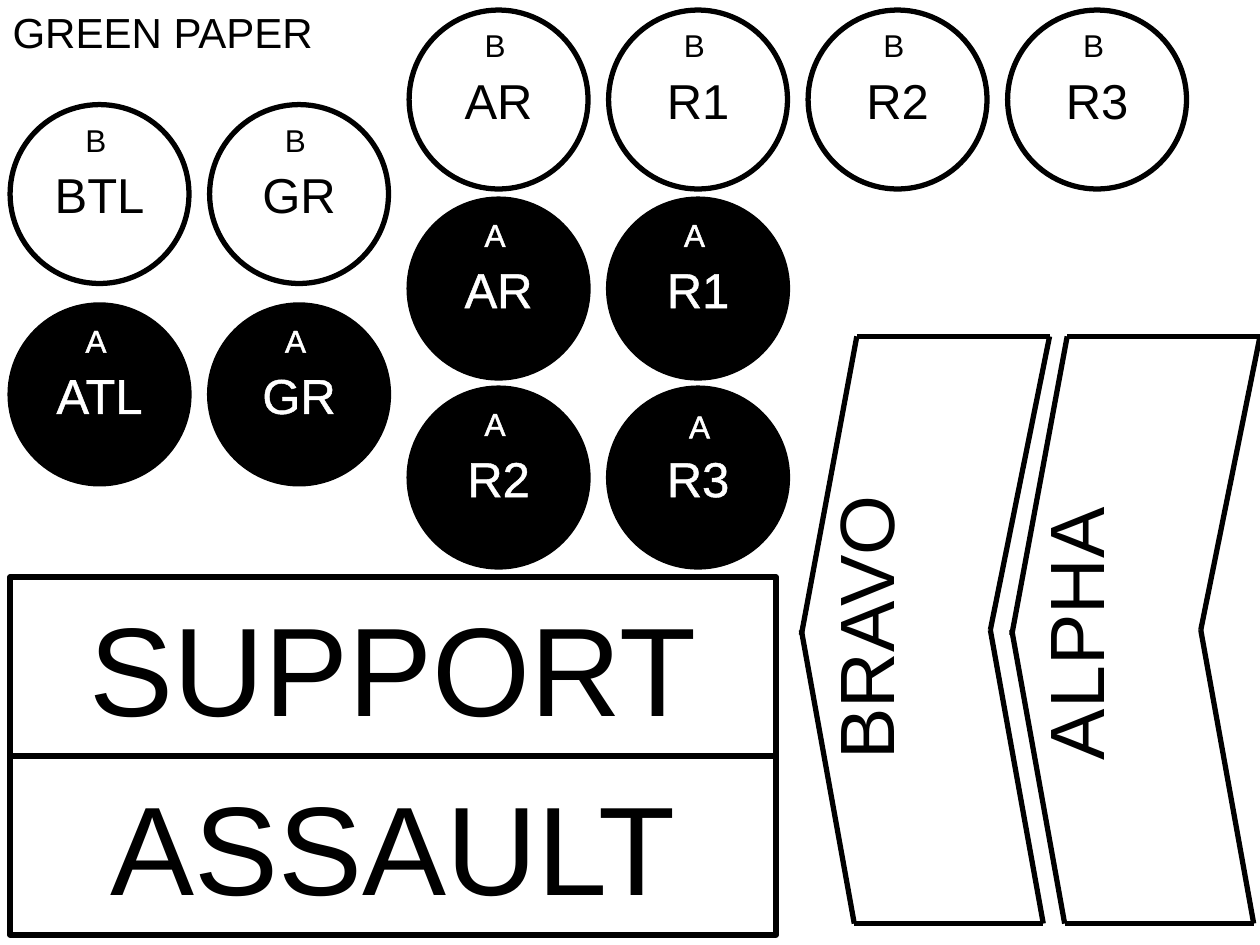
from dataclasses import dataclass

import lxml.etree
import pptx
import pptx.dml.color
import pptx.enum.shapes
import pptx.enum.text
import pptx.oxml.ns
import pptx.util

Inches = pptx.util.Inches
Pt = pptx.util.Pt
RGBColor = pptx.dml.color.RGBColor
MSO_SHAPE = pptx.enum.shapes.MSO_SHAPE
MSO_ANCHOR = pptx.enum.text.MSO_ANCHOR
PP_ALIGN = pptx.enum.text.PP_ALIGN
qn = pptx.oxml.ns.qn

BLACK = RGBColor(0, 0, 0)
WHITE = RGBColor(255, 255, 255)
FONT = "Arial"
MARGIN = 0.08
PITCH = 19 / 12
DISC = 1.42
LINE_WIDTH = Pt(3)


@dataclass
class Disc:
    team: str
    role: str
    col: int
    top: float
    tag_dx: float = 0.5
    tag_dy: float = 0.08


@dataclass
class Banner:
    text: str
    top: float


@dataclass
class Chevron:
    text: str
    left: float
    text_width: float
    text_middle: float


DISCS = [
    Disc("B", "GR", 1, 0.83),
    Disc("B", "BTL", 0, 0.83),
    Disc("B", "R3", 5, 0.08),
    Disc("B", "R2", 4, 0.08),
    Disc("B", "R1", 3, 0.08),
    Disc("B", "AR", 2, 0.08),
    Disc("A", "GR", 1, 2.42),
    Disc("A", "ATL", 0, 2.42),
    Disc("A", "R3", 3, 3.08, 0.54, 0.1),
    Disc("A", "R2", 2, 3.08),
    Disc("A", "R1", 3, 1.58),
    Disc("A", "AR", 2, 1.58),
]
BANNERS = [Banner("SUPPORT", 4.58), Banner("ASSAULT", 6)]
CHEVRONS = [Chevron("ALPHA", 8.03, 2.23, 5.03), Chevron("BRAVO", 6.36, 2.32, 4.98)]
CHEVRON_EDGES = [
    ((0, 5.04), (0.44, 2.67)),
    ((0.44, 2.67), (1.97, 2.67)),
    ((1.97, 2.67), (1.5, 5)),
    ((0.42, 7.33), (1.92, 7.33)),
    ((1.5, 5), (1.92, 7.33)),
    ((0, 5), (0.42, 7.33)),
]


def write(tf, text: str, size: int, color: RGBColor, align, outlined: bool = True) -> None:
    p = tf.paragraphs[0]
    p.alignment = align
    r = p.add_run()
    r.text = text
    r.font.name = FONT
    r.font.size = Pt(size)
    r.font.color.rgb = color
    if outlined:
        ln = lxml.etree.Element(qn("a:ln"), w=str(Pt(0.75)))
        fill = lxml.etree.SubElement(ln, qn("a:solidFill"))
        lxml.etree.SubElement(fill, qn("a:srgbClr"), val=str(color))
        r.font._element.insert(0, ln)


def fit_to_text(tf) -> None:
    tf.word_wrap = False
    tf.auto_size = pptx.enum.text.MSO_AUTO_SIZE.SHAPE_TO_FIT_TEXT
    tf.vertical_anchor = MSO_ANCHOR.TOP


def add_box(shapes, kind, left: float, top: float, width: float, height: float,
            fill: RGBColor, lined: bool = True):
    sp = shapes.add_shape(kind, Inches(left), Inches(top), Inches(width), Inches(height))
    sp.shadow.inherit = False
    sp.fill.solid()
    sp.fill.fore_color.rgb = fill
    if lined:
        sp.line.color.rgb = BLACK
        sp.line.width = LINE_WIDTH
    else:
        sp.line.fill.background()
    sp.text_frame.vertical_anchor = MSO_ANCHOR.MIDDLE
    return sp


def add_disc(s, disc: Disc) -> None:
    fill, ink = (WHITE, BLACK) if disc.team == "B" else (BLACK, WHITE)
    left = MARGIN + disc.col * PITCH
    shapes = s.shapes.add_group_shape().shapes
    sp = add_box(shapes, MSO_SHAPE.OVAL, left, disc.top, DISC, DISC, fill)
    write(sp.text_frame, disc.role, 28, ink, PP_ALIGN.CENTER)
    tag = add_box(shapes, MSO_SHAPE.RECTANGLE, left + disc.tag_dx, disc.top + disc.tag_dy,
                  0.38, 0.4, fill, lined=False)
    fit_to_text(tag.text_frame)
    write(tag.text_frame, disc.team, 18, ink, PP_ALIGN.LEFT)


def add_banner(s, banner: Banner) -> None:
    sp = add_box(s.shapes, MSO_SHAPE.RECTANGLE, MARGIN, banner.top, 6.08, 1.42, WHITE)
    write(sp.text_frame, banner.text, 72, BLACK, PP_ALIGN.CENTER)


def add_chevron(s, chevron: Chevron) -> None:
    shapes = s.shapes.add_group_shape().shapes
    for (x1, y1), (x2, y2) in CHEVRON_EDGES:
        line = shapes.add_connector(
            pptx.enum.shapes.MSO_CONNECTOR.STRAIGHT,
            Inches(chevron.left + x1), Inches(y1), Inches(chevron.left + x2), Inches(y2))
        line.line.color.rgb = BLACK
        line.line.width = LINE_WIDTH
        lxml.etree.SubElement(line._element.spPr, qn("a:effectLst"))
    width, height = chevron.text_width, 0.84
    sp = shapes.add_textbox(Inches(chevron.left + 0.5 - width / 2),
                            Inches(chevron.text_middle - height / 2),
                            Inches(width), Inches(height))
    sp.rotation = 270
    fit_to_text(sp.text_frame)
    write(sp.text_frame, chevron.text, 44, BLACK, PP_ALIGN.CENTER)


def add_title(s, text: str) -> None:
    sp = s.shapes.title
    sp.left, sp.top, sp.width, sp.height = Inches(0), Inches(0), Inches(2.61), Inches(0.5)
    fit_to_text(sp.text_frame)
    write(sp.text_frame, text, 24, BLACK, PP_ALIGN.LEFT, outlined=False)


def main() -> None:
    prs = pptx.Presentation()
    prs.slide_width, prs.slide_height = Inches(10), Inches(7.5)
    s = prs.slides.add_slide(prs.slide_layouts[5])
    add_title(s, "GREEN PAPER")
    for disc in DISCS:
        add_disc(s, disc)
    for banner in BANNERS:
        add_banner(s, banner)
    for chevron in CHEVRONS:
        add_chevron(s, chevron)
    prs.save("out.pptx")


if __name__ == "__main__":
    main()
